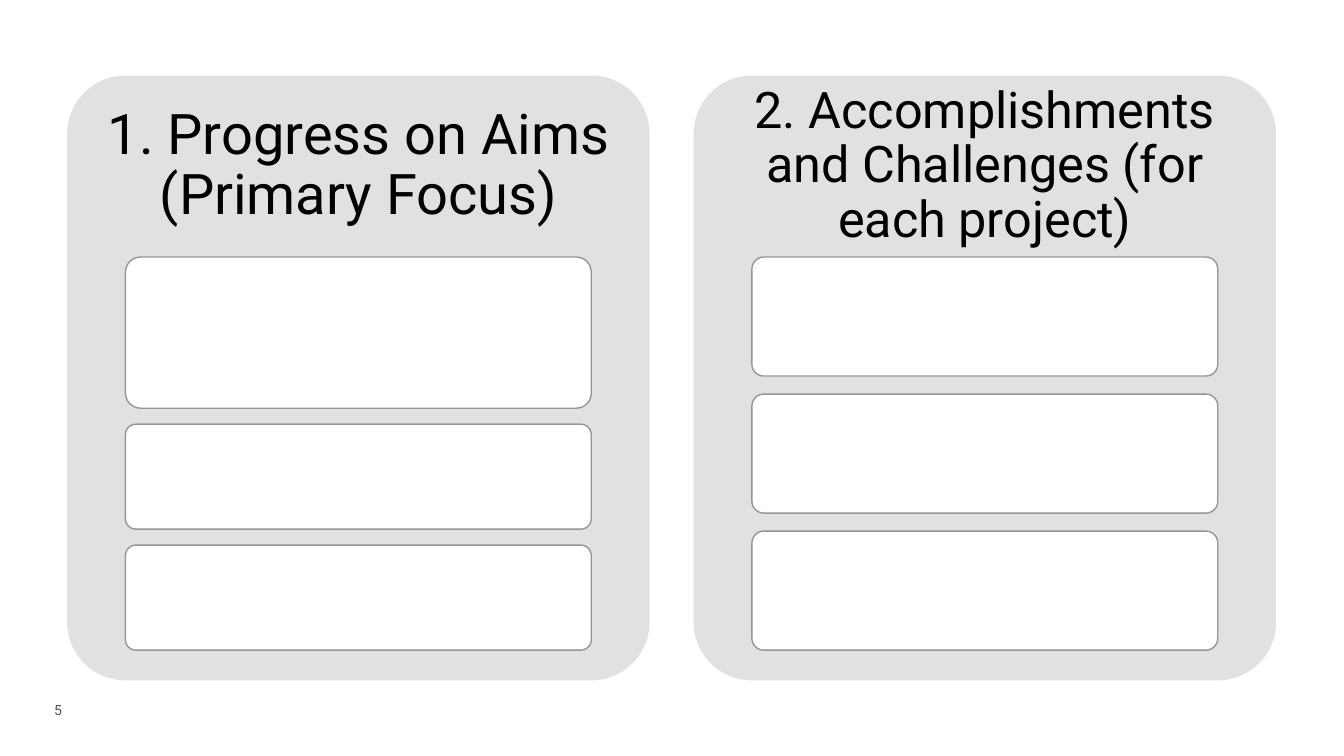
from pptx import Presentation
from pptx.dml.color import RGBColor
from pptx.enum.shapes import MSO_SHAPE
from pptx.enum.text import MSO_ANCHOR, PP_ALIGN
from pptx.util import Pt

COLOURS = {"panel": "E1E1E1", "card": "FFFFFF", "border": "969696",
           "heading": "000000", "number": "44546A"}
PANEL_TOP, PANEL_WIDTH, PANEL_HEIGHT = 54, 416, 432
HEADING_HEIGHT = 129.6
CARD_INDENT, CARD_WIDTH, CARDS_HEIGHT = 41.6, 332.8, 280.8

PANELS = [
    (48, "1. Progress on Aims (Primary Focus)", 40, 12, [108, 75, 75]),
    (495.5, "2. Accomplishments and Challenges (for each project)", 36, 10.8, [85, 85, 85]),
]


def add_rounded(left, top, width, height, fill):
    rounded = slide.shapes.add_shape(MSO_SHAPE.ROUNDED_RECTANGLE,
                                     Pt(left), Pt(top), Pt(width), Pt(height))
    rounded.adjustments[0] = 0.1
    rounded.shadow.inherit = False
    rounded.fill.solid()
    rounded.fill.fore_color.rgb = RGBColor.from_string(COLOURS[fill])
    rounded.line.fill.background()
    return rounded


def add_label(left, top, width, height, text, size, colour):
    frame = slide.shapes.add_textbox(Pt(left), Pt(top), Pt(width), Pt(height)).text_frame
    frame.text = text
    font = frame.paragraphs[0].runs[0].font
    font.name = "Roboto"
    font.size = Pt(size)
    font.color.rgb = RGBColor.from_string(COLOURS[colour])
    return frame


presentation = Presentation()
presentation.slide_width, presentation.slide_height = Pt(960), Pt(540)
slide = presentation.slides.add_slide(presentation.slide_layouts[6])

page_number = add_label(31.7, 497.5, 28, 19.4, "5", 10, "number")
page_number.word_wrap = False

for left, title, size, inset, card_heights in PANELS:
    add_rounded(left, PANEL_TOP, PANEL_WIDTH, PANEL_HEIGHT, "panel")

    heading = add_label(left, PANEL_TOP, PANEL_WIDTH, HEADING_HEIGHT, title, size, "heading")
    heading.word_wrap = True
    heading.vertical_anchor = MSO_ANCHOR.MIDDLE
    heading.margin_left = heading.margin_right = Pt(inset)
    heading.margin_top = heading.margin_bottom = Pt(inset)
    heading.paragraphs[0].alignment = PP_ALIGN.CENTER
    heading.paragraphs[0].line_spacing = 0.9

    gap = (CARDS_HEIGHT - sum(card_heights)) / (len(card_heights) - 1)
    card_top = PANEL_TOP + HEADING_HEIGHT
    for card_height in card_heights:
        card = add_rounded(left + CARD_INDENT, card_top, CARD_WIDTH, card_height, "card")
        card.line.color.rgb = RGBColor.from_string(COLOURS["border"])
        card.line.width = Pt(1)
        card_top += card_height + gap

presentation.save("out.pptx")
